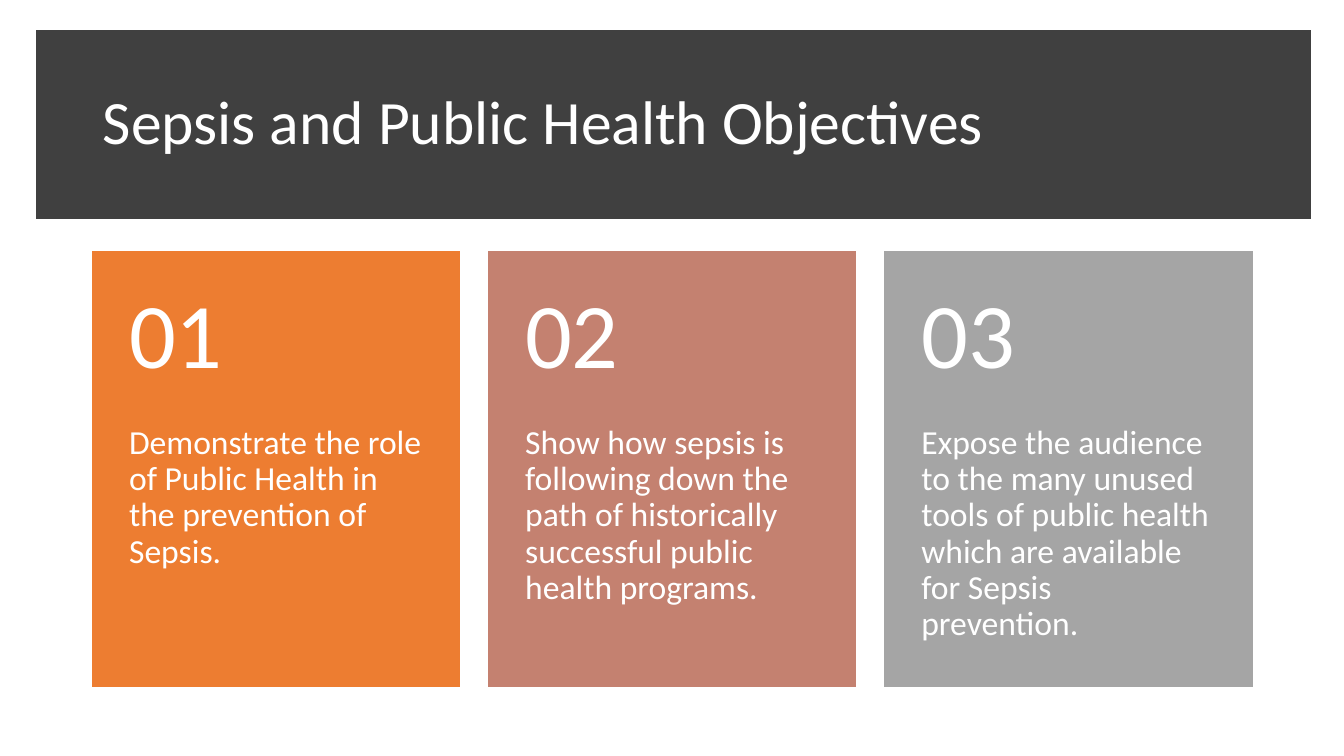
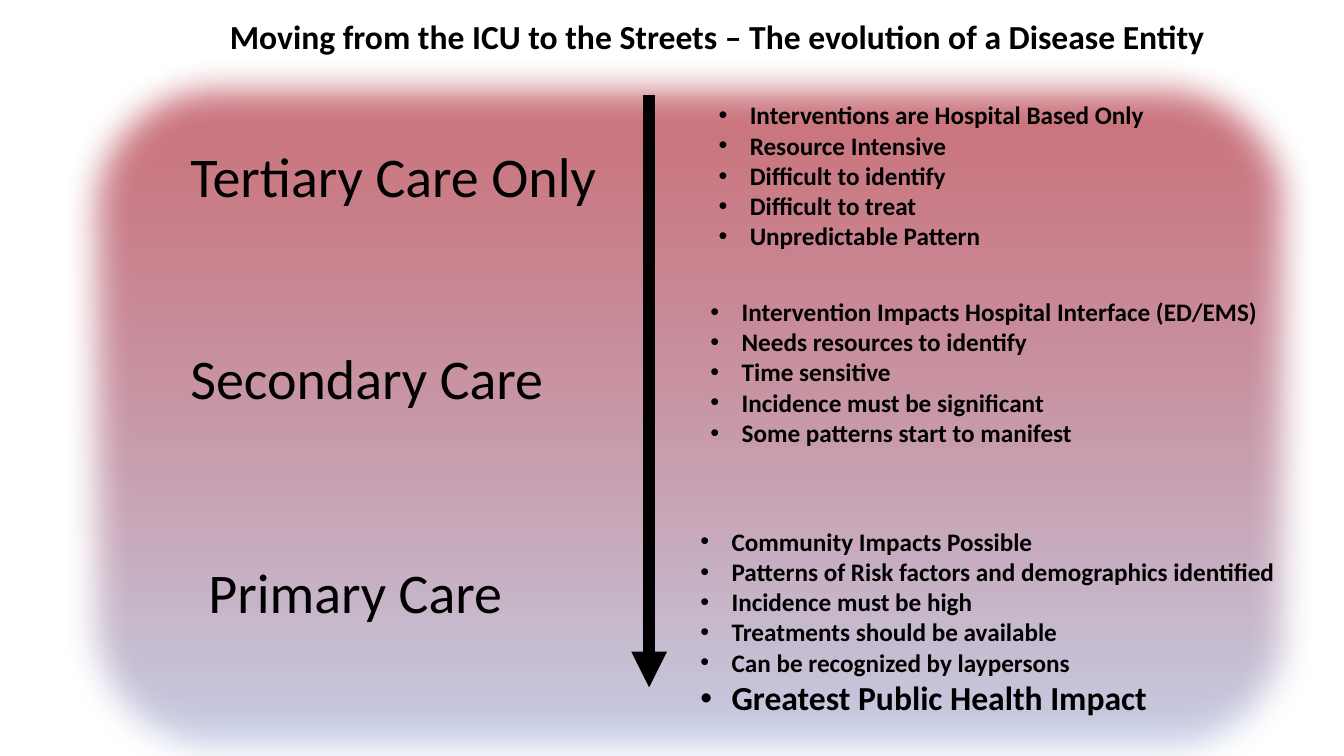
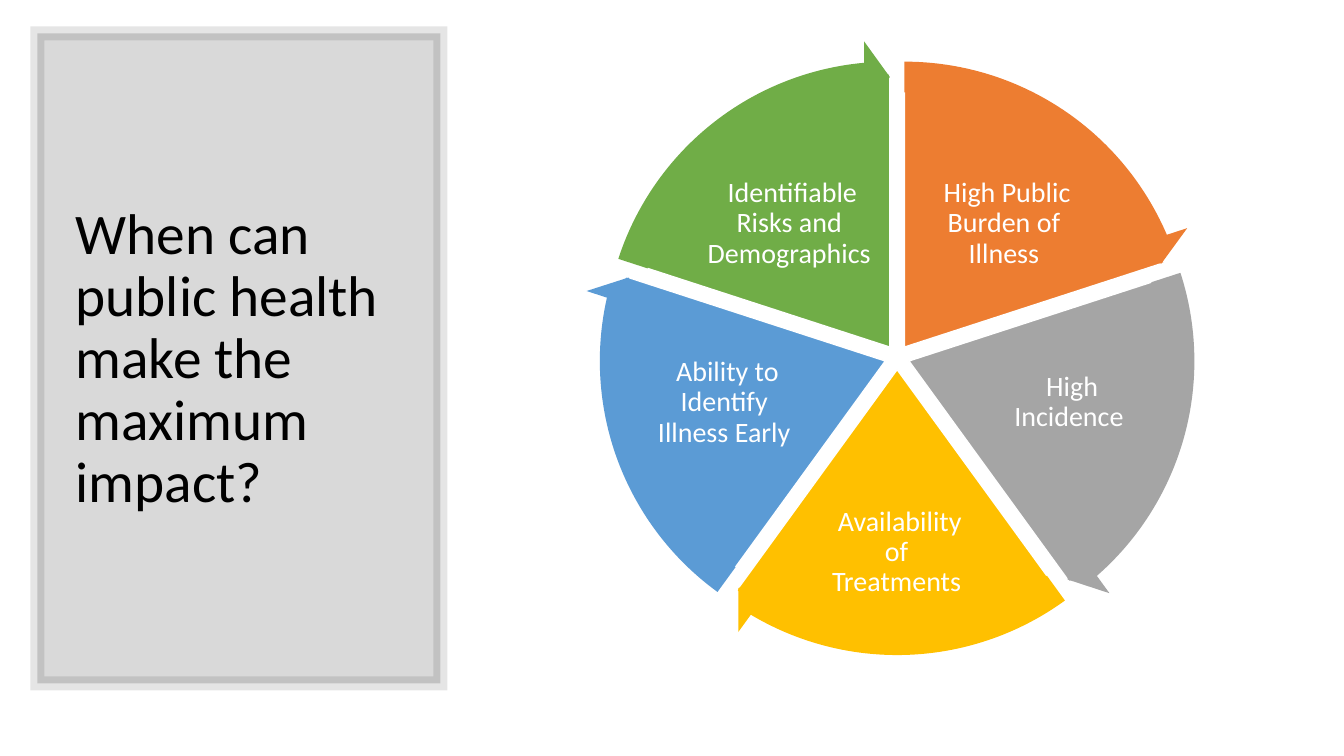
"""Build three slides on sepsis and public health."""
import math

from lxml import etree
from pptx import Presentation
from pptx.dml.color import RGBColor
from pptx.enum.shapes import MSO_CONNECTOR, MSO_SHAPE
from pptx.enum.text import MSO_ANCHOR, MSO_AUTO_SIZE, PP_ALIGN
from pptx.oxml.ns import qn
from pptx.util import Inches, Pt

RECTANGLE = MSO_SHAPE.RECTANGLE
ROUNDED = MSO_SHAPE.ROUNDED_RECTANGLE
WEDGE = MSO_SHAPE.PIE
ARROW = MSO_SHAPE.CIRCULAR_ARROW
STRAIGHT = MSO_CONNECTOR.STRAIGHT
TOP, MIDDLE = MSO_ANCHOR.TOP, MSO_ANCHOR.MIDDLE
LEFT, CENTER = PP_ALIGN.LEFT, PP_ALIGN.CENTER
NO_FIT = MSO_AUTO_SIZE.NONE

FONT = "Calibri"
BLACK, WHITE, CHARCOAL = "000000", "FFFFFF", "404040"
ORANGE, CLAY, GRAY = "ED7D31", "C48170", "A5A5A5"
GOLD, BLUE, GREEN = "FFC000", "5B9BD5", "70AD47"
hex_color = RGBColor.from_string

deck = Presentation()
deck.slide_width = Inches(40 / 3)
deck.slide_height = Inches(7.5)
CELL = deck.slide_width / 40
TITLE_ONLY = deck.slide_layouts[5]


def draw(page, kind, cells, fill, line=None, width=1, alphas=()):
    """Draw a preset shape on the 40-column grid; two fill colours make a gradient."""
    shape = page.shapes.add_shape(kind, *(round(CELL * cell) for cell in cells))
    shape.shadow.inherit = False
    if isinstance(fill, tuple):
        shape.fill.gradient()
        shape.fill.gradient_angle = 270
        for stop, color in zip(shape.fill.gradient_stops, fill):
            stop.color.rgb = hex_color(color)
    else:
        shape.fill.solid()
        shape.fill.fore_color.rgb = hex_color(fill)
    if line:
        shape.line.color.rgb = hex_color(line)
        shape.line.width = Pt(width)
        outline = shape.element.spPr.find(qn("a:ln"))
        etree.SubElement(outline, qn("a:miter"), lim="800000")
    else:
        shape.line.fill.background()
    for color, alpha in zip(shape.element.spPr.iter(qn("a:srgbClr")), alphas):
        etree.SubElement(color, qn("a:alpha"), val=str(alpha * 1000))
    return shape


def write(page, cells, lines, size=24, color=BLACK, bold=False, align=LEFT, anchor=TOP,
          spacing=1.0, insets=(7.2, 3.6, 7.2, 3.6), bullet=False, title=False):
    """Write lines into a text box, or into the title placeholder raised to the front."""
    box = page.shapes.title if title else page.shapes.add_textbox(0, 0, 0, 0)
    box.left, box.top, box.width, box.height = (round(CELL * cell) for cell in cells)
    if title:
        box.element.getparent().append(box.element)
    frame = box.text_frame
    frame.word_wrap = True
    frame.auto_size = NO_FIT
    frame.vertical_anchor = anchor
    (frame.margin_left, frame.margin_top,
     frame.margin_right, frame.margin_bottom) = (Pt(inset) for inset in insets)
    for index, line in enumerate(lines):
        para = frame.add_paragraph() if index else frame.paragraphs[0]
        para.alignment = align
        para.line_spacing = spacing
        span = para.add_run()
        span.text = line
        span.font.name = FONT
        span.font.size = Pt(size)
        span.font.bold = bold
        span.font.color.rgb = hex_color(color)
        if bullet:
            properties = para._p.get_or_add_pPr()
            properties.set("marL", str(Inches(0.31)))
            properties.set("indent", str(-Inches(0.31)))
            etree.SubElement(properties, qn("a:buFont"), typeface="Arial")
            etree.SubElement(properties, qn("a:buChar"), char="•")
    return box


page = deck.slides.add_slide(TITLE_ONLY)
draw(page, RECTANGLE, (1.29, 1.11, 37.53, 5.19), CHARCOAL, CHARCOAL, 10)
write(page, (2.76, 1.53, 34.5, 4.35), ["Sepsis and Public Health Objectives"],
      size=44, color=WHITE, anchor=MIDDLE, spacing=0.9, title=True)
objectives = [
    (ORANGE, "Demonstrate the role of Public Health in the prevention of Sepsis."),
    (CLAY, "Show how sepsis is following down the path of historically successful "
           "public health programs."),
    (GRAY, "Expose the audience to the many unused tools of public health which are "
           "available for Sepsis prevention."),
]
for index, (color, objective) in enumerate(objectives):
    left = 2.76 + 11.79 * index
    draw(page, RECTANGLE, (left, 7.5, 10.92, 12.93), color, color)
    write(page, (left, 12.66, 10.92, 7.74), [objective], color=WHITE, spacing=0.9,
          insets=(26, 0, 26, 26))
    write(page, (left, 7.5, 10.92, 5.16), [f"{index + 1:02}"], size=66, color=WHITE,
          anchor=MIDDLE, spacing=0.9, insets=(26, 13, 26, 13))

page = deck.slides.add_slide(TITLE_ONLY)
glow = draw(page, ROUNDED, (1.92, 1.74, 37.23, 21.45), ("B93D48", "C7D5ED"), "325491",
            alphas=(74,))
effects = glow.element.spPr.find(qn("a:effectLst"))
etree.SubElement(effects, qn("a:softEdge"), rad=str(Pt(25)))
care_levels = [
    ((5.37, 4.08, 13.32, 2.31), "Tertiary Care Only", (21.09, 2.82, 14, 4.86),
     ["Interventions are Hospital Based Only", "Resource Intensive",
      "Difficult to identify", "Difficult to treat", "Unpredictable Pattern"]),
    ((5.37, 10.08, 13.32, 2.31), "Secondary Care", (20.85, 8.67, 17.4, 4.86),
     ["Intervention Impacts Hospital Interface (ED/EMS)", "Needs resources to identify",
      "Time sensitive", "Incidence must be significant",
      "Some patterns start to manifest"]),
    ((5.91, 16.44, 13.32, 2.31), "Primary Care", (20.55, 15.51, 18.6, 6.6),
     ["Community Impacts Possible",
      "Patterns of Risk factors and demographics identified",
      "Incidence must be high", "Treatments should be available",
      "Can be recognized by laypersons", "Greatest Public Health Impact"]),
]
for name_cells, name, list_cells, points in care_levels:
    write(page, name_cells, [name], size=40)
    traits = write(page, list_cells, points, size=18, bold=True, bullet=True)
traits.text_frame.paragraphs[-1].runs[0].font.size = Pt(24)
write(page, (6.54, 0.33, 30.5, 1.5),
      ["Moving from the ICU to the Streets – The evolution of a Disease Entity"],
      bold=True, title=True)
descent = page.shapes.add_connector(
    STRAIGHT, *(round(CELL * cell) for cell in (19.32, 2.82, 19.32, 20.46)))
descent.line.color.rgb = hex_color(BLACK)
descent.line.width = Pt(8.5)
etree.SubElement(descent.element.spPr.find(qn("a:ln")), qn("a:tailEnd"), type="triangle")
etree.SubElement(descent.element.spPr, qn("a:effectLst"))

page = deck.slides.add_slide(TITLE_ONLY)
draw(page, RECTANGLE, (1.11, 0.99, 12, 19.35), BLACK, BLACK, 10, alphas=(15, 10))
write(page, (1.95, 2.1, 10.38, 17.25),
      ["When can public health make the maximum impact?"],
      size=41, anchor=MIDDLE, spacing=0.9, title=True)
HUB_X, HUB_Y, GAP = 26.7, 10.63, 0.37
WEDGE_SIZE, ARROW_SIZE = 16.26, 18.27
DEGREE = 0.6
factors = [
    (ORANGE, " High Public Burden of Illness", (27.27, 4.92, 5.22, 3.48)),
    (GRAY, " High Incidence", (29.4, 10.05, 4.83, 3.87)),
    (GOLD, " Availability of Treatments", (24.36, 14.31, 4.65, 4.26)),
    (BLUE, " Ability to Identify Illness Early", (19.14, 10.05, 4.83, 3.87)),
    (GREEN, " Identifiable Risks and Demographics", (20.88, 4.92, 5.22, 3.48)),
]
sweep = 360 / len(factors)
arrows = []
for index, (color, factor, cells) in enumerate(factors):
    start = (270 + sweep * index) % 360
    end = (start + sweep) % 360
    middle = math.radians(start + sweep / 2)
    center_x = HUB_X + GAP * math.cos(middle)
    center_y = HUB_Y + GAP * math.sin(middle)
    wedge = draw(page, WEDGE, (center_x - WEDGE_SIZE / 2, center_y - WEDGE_SIZE / 2,
                               WEDGE_SIZE, WEDGE_SIZE), color, WHITE)
    wedge.adjustments[0] = start * DEGREE
    wedge.adjustments[1] = end * DEGREE
    write(page, cells, [factor], size=20, color=WHITE, align=CENTER, anchor=MIDDLE,
          spacing=0.9, insets=(2, 2, 2, 2))
    arrows.append((color, center_x, center_y, start * DEGREE, end * DEGREE))
HEAD_ANGLE = 3.28
for color, center_x, center_y, start, end in arrows:
    arrow = draw(page, ARROW, (center_x - ARROW_SIZE / 2, center_y - ARROW_SIZE / 2,
                               ARROW_SIZE, ARROW_SIZE), color)
    for index, value in enumerate((0.05, HEAD_ANGLE, end - HEAD_ANGLE, start, 0.06)):
        arrow.adjustments[index] = value

deck.save("out.pptx")
